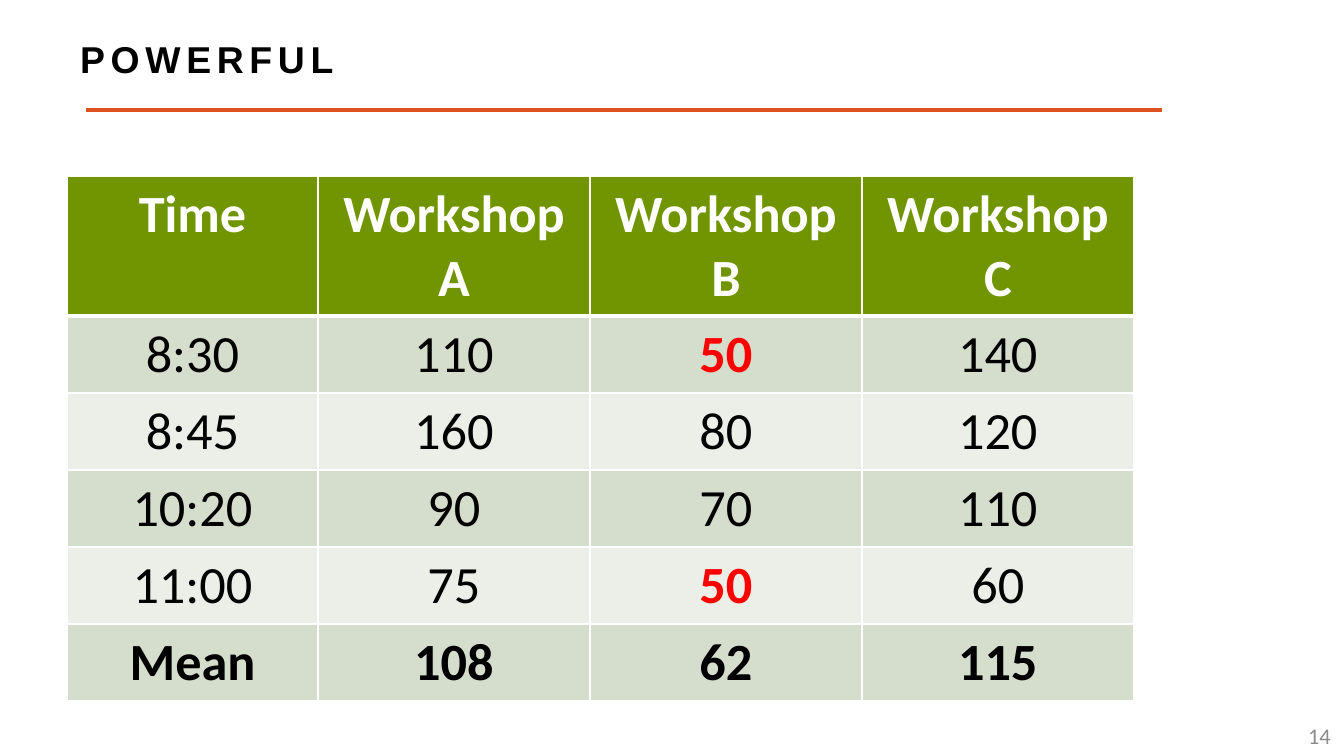
import pptx
import pptx.dml.color
import pptx.enum.shapes
import pptx.enum.text
import pptx.oxml
import pptx.oxml.ns
import pptx.util

PX = 6804  # EMU in one px, 134.4 px to the inch
ALIGN = pptx.enum.text.PP_ALIGN


def color(hex_value):
    return pptx.dml.color.RGBColor.from_string(hex_value)


def write(frame, text, align, hex_value, **font):
    """Fill the first paragraph of a frame with one formatted span."""
    para = frame.paragraphs[0]
    para.alignment = align
    span = para.add_run()
    span.text = text
    for name, value in font.items():
        setattr(span.font, name, value)
    span.font.color.rgb = color(hex_value)
    return span


deck = pptx.Presentation()
deck.slide_width = 1344 * PX
deck.slide_height = 756 * PX
page = deck.slides.add_slide(deck.slide_layouts[6])

# Title and slide number
labels = [
    ("POWERFUL", (67, 0, 1210, 118), ALIGN.LEFT, "000000",
     {"name": "Arial", "size": pptx.util.Pt(20), "bold": True}, 300),
    ("14", (1031, 716, 313, 40), ALIGN.RIGHT, "8C8C8C",
     {"name": "Calibri", "size": pptx.util.Pt(12)}, 0),
]
for text, place, align, hex_value, font, spacing in labels:
    box = page.shapes.add_textbox(*(length * PX for length in place))
    box.text_frame.word_wrap = True
    box.text_frame.vertical_anchor = pptx.enum.text.MSO_ANCHOR.MIDDLE
    span = write(box.text_frame, text, align, hex_value, **font)
    if spacing:
        span.font._element.set("spc", str(spacing))

# Attendance table
rows = [
    ("Time", "Workshop A", "Workshop B", "Workshop C"),
    ("8:30", "110", "50", "140"),
    ("8:45", "160", "80", "120"),
    ("10:20", "90", "70", "110"),
    ("11:00", "75", "50", "60"),
    ("Mean", "108", "62", "115"),
]
widths = [251, 272, 272, 272]
heights = [140] + [77] * 5
table = page.shapes.add_table(
    len(rows), len(widths), 67 * PX, 176 * PX, sum(widths) * PX, sum(heights) * PX
).table
for column, width in zip(table.columns, widths):
    column.width = width * PX
for row, height in zip(table.rows, heights):
    row.height = height * PX

for r, values in enumerate(rows):
    header = r == 0
    fill = "719500" if header else ("D5DDCC" if r % 2 else "EBEFE7")
    # A thick rule parts the header from the body
    borders = {"lnL": 1, "lnR": 1, "lnT": 3 if r == 1 else 1, "lnB": 3 if header else 1}
    for c, value in enumerate(values):
        cell = table.cell(r, c)
        cell.fill.solid()
        cell.fill.fore_color.rgb = color(fill)
        low = value == "50"
        hex_value = "FFFFFF" if header else ("FF0000" if low else "000000")
        write(cell.text_frame, value, ALIGN.CENTER, hex_value, name="Calibri",
              size=pptx.util.Pt(28), bold=header or low or values[0] == "Mean")
        properties = cell._tc.get_or_add_tcPr()
        for index, (side, points) in enumerate(borders.items()):
            properties.insert(index, pptx.oxml.parse_xml(
                f'<a:{side} {pptx.oxml.ns.nsdecls("a")} w="{pptx.util.Pt(points)}">'
                f'<a:solidFill><a:srgbClr val="FFFFFF"/></a:solidFill></a:{side}>'))

# Rule under the title
rule = page.shapes.add_connector(
    pptx.enum.shapes.MSO_CONNECTOR.STRAIGHT, 86 * PX, 110 * PX, 1162 * PX, 110 * PX)
rule.line.color.rgb = color("DC5220")
rule.line.width = pptx.util.Pt(2)
rule._element.spPr.append(
    pptx.oxml.parse_xml(f'<a:effectLst {pptx.oxml.ns.nsdecls("a")}/>'))

deck.save("out.pptx")
